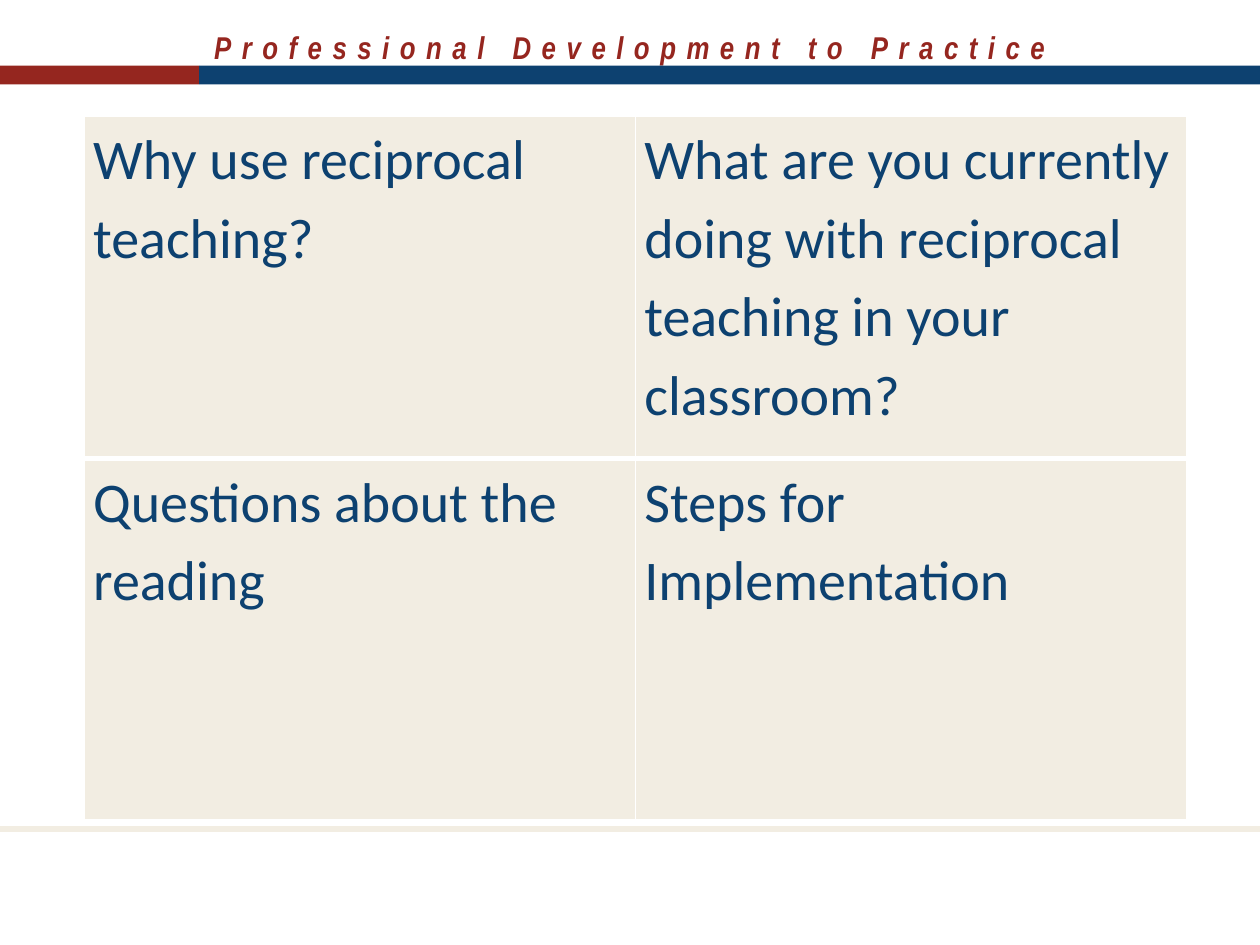
from dataclasses import dataclass

from lxml.etree import SubElement
from pptx import Presentation
from pptx.dml.color import RGBColor
from pptx.enum.shapes import MSO_CONNECTOR, MSO_SHAPE
from pptx.enum.text import PP_ALIGN
from pptx.oxml.ns import qn
from pptx.util import Inches, Pt


@dataclass(frozen=True)
class Theme:
    red: str = "95261F"
    blue: str = "0D4170"
    cream: str = "F2EDE2"
    white: str = "FFFFFF"
    head: int = 18
    body: int = 32


THEME = Theme()
WIDTH = 10
CELLS = [
    ["Why use reciprocal teaching?",
     "What are you currently doing with reciprocal teaching in your classroom?"],
    ["Questions about the reading", "Steps for Implementation"],
]


def paint(fill, color):
    fill.solid()
    fill.fore_color.rgb = RGBColor.from_string(color)


def write(frame, text, *, size, color, face, bold=False, italic=False,
          align=PP_ALIGN.LEFT, lead=1.0, track=0):
    """Fill a text frame; track is the letter spacing in points."""
    frame.word_wrap = True
    para = frame.paragraphs[0]
    para.alignment = align
    para.line_spacing = lead
    run = para.add_run()
    run.text = text
    font = run.font
    font.name, font.size = face, Pt(size)
    font.bold, font.italic = bold, italic
    font.color.rgb = RGBColor.from_string(color)
    if track:
        run._r.get_or_add_rPr().set("spc", str(track * 100))


def add_head(slide, text):
    box = slide.shapes.add_textbox(0, Inches(0.17), Inches(WIDTH), Inches(0.4))
    write(box.text_frame, text, size=THEME.head, color=THEME.red,
          face="Arial Narrow", bold=True, italic=True,
          align=PP_ALIGN.CENTER, track=6)


def add_bar(slide, left, width, color):
    bar = slide.shapes.add_shape(
        MSO_SHAPE.RECTANGLE, Inches(left), Inches(0.52), Inches(width), Inches(0.15))
    bar.shadow.inherit = False
    paint(bar.fill, color)
    bar.line.fill.background()


def add_rule(slide, top):
    rule = slide.shapes.add_connector(
        MSO_CONNECTOR.STRAIGHT, 0, Inches(top), Inches(WIDTH), Inches(top))
    rule.line.width = Pt(3)
    rule.line.color.rgb = RGBColor.from_string(THEME.cream)
    SubElement(rule._element.spPr, qn("a:effectLst"))


def set_edges(cell, **widths):
    """Draw white cell borders, given as side=points in the order L, R, T, B."""
    props = cell._tc.get_or_add_tcPr()
    for side, width in widths.items():
        line = SubElement(props, qn(f"a:ln{side}"), w=str(Pt(width)))
        fill = SubElement(line, qn("a:solidFill"))
        SubElement(fill, qn("a:srgbClr"), val=THEME.white)


def add_grid(slide, texts):
    heights = [2.72, 2.87]
    table = slide.shapes.add_table(
        2, 2, Inches(0.67), Inches(0.92), Inches(8.75), Inches(sum(heights))).table
    table.first_row = table.horz_banding = False
    for row, height in zip(table.rows, heights):
        row.height = Inches(height)
    for r, line in enumerate(texts):
        for c, text in enumerate(line):
            cell = table.cell(r, c)
            cell.margin_left = cell.margin_right = Inches(0.07)
            cell.margin_top = cell.margin_bottom = 0
            set_edges(cell, L=1, R=1, T=3 if r else 1, B=1 if r else 3)
            paint(cell.fill, THEME.cream)
            write(cell.text_frame, text, size=THEME.body, color=THEME.blue,
                  face="Calibri", lead=1.15)


def main():
    deck = Presentation()
    deck.slide_width, deck.slide_height = Inches(WIDTH), Inches(7.5)
    slide = deck.slides.add_slide(deck.slide_layouts[6])
    paint(slide.background.fill, THEME.white)
    split = 1.58
    add_head(slide, "Professional Development to Practice")
    add_bar(slide, 0, split, THEME.red)
    add_bar(slide, split, WIDTH - split, THEME.blue)
    add_rule(slide, 6.58)
    add_grid(slide, CELLS)
    deck.save("out.pptx")


if __name__ == "__main__":
    main()
